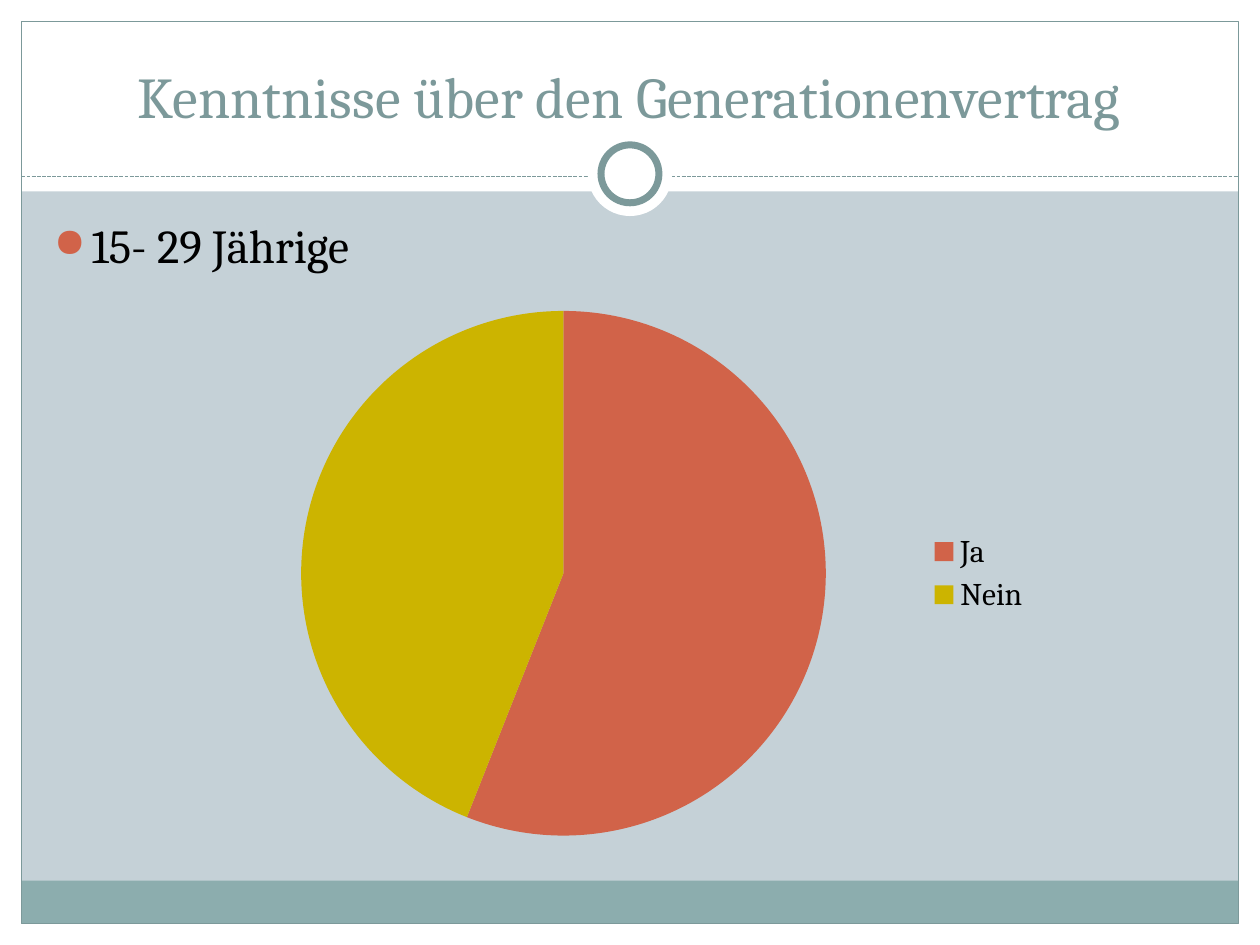
from lxml.etree import SubElement
from pptx import Presentation
from pptx.chart.data import CategoryChartData
from pptx.dml.color import RGBColor
from pptx.enum.chart import XL_CHART_TYPE, XL_LEGEND_POSITION
from pptx.enum.dml import MSO_LINE
from pptx.enum.shapes import MSO_CONNECTOR, MSO_SHAPE
from pptx.enum.text import MSO_ANCHOR, PP_ALIGN
from pptx.oxml.ns import qn
from pptx.util import Inches, Pt

WHITE = RGBColor(0xFF, 0xFF, 0xFF)
BLACK = RGBColor(0x00, 0x00, 0x00)
MIST = RGBColor(0xC5, 0xD1, 0xD7)
SAGE = RGBColor(0x8C, 0xAD, 0xAE)
SLATE = RGBColor(0x7C, 0x99, 0x9A)
RUST = RGBColor(0xD1, 0x63, 0x49)
MUSTARD = RGBColor(0xCC, 0xB4, 0x00)
FONT = "Cambria"
WIDTH, HEIGHT, MARGIN = 10, 7.5, 0.17


def inches(box):
    return [Inches(value) for value in box]


def set_font(font, size, color):
    for name, value in {"name": FONT, "size": Pt(size)}.items():
        setattr(font, name, value)
    font.color.rgb = color


def add_plain(page, kind, box, fill=None, line=None, weight=0.75):
    shape = page.shapes.add_shape(kind, *inches(box))
    shape.shadow.inherit = False
    if fill is None:
        shape.fill.background()
    else:
        shape.fill.solid()
        shape.fill.fore_color.rgb = fill
    if line is None:
        shape.line.fill.background()
    else:
        shape.line.color.rgb = line
        shape.line.width = Pt(weight)


def add_text(page, box, text, size, color, anchor):
    frame = page.shapes.add_textbox(*inches(box)).text_frame
    for name, value in {"word_wrap": True, "vertical_anchor": anchor}.items():
        setattr(frame, name, value)
    para = frame.paragraphs[0]
    span = para.add_run()
    span.text = text
    set_font(span.font, size, color)
    return para


def add_frame(page, box):
    left, top, width, height = box
    right, bottom = left + width, top + height
    inner = width - 2 * MARGIN

    # White margins and header band
    for band in (
        (left, bottom - MARGIN, width, MARGIN),
        (left, top, width, 1.52),
        (left, top, MARGIN, height),
        (right - MARGIN, top, MARGIN, height),
    ):
        add_plain(page, MSO_SHAPE.RECTANGLE, band, WHITE)

    # Footer band and outline
    add_plain(page, MSO_SHAPE.RECTANGLE,
              (left + MARGIN, bottom - MARGIN - 0.34, inner, 0.34), SAGE)
    add_plain(page, MSO_SHAPE.RECTANGLE,
              (left + MARGIN, top + MARGIN, inner, height - 2 * MARGIN), line=SLATE)

    # Dashed divider
    divider = page.shapes.add_connector(
        MSO_CONNECTOR.STRAIGHT,
        *inches((left + MARGIN, top + 1.4, right - MARGIN, top + 1.4)))
    divider.line.color.rgb = SLATE
    divider.line.width = Pt(0.75)
    divider.line.dash_style = MSO_LINE.SQUARE_DOT
    SubElement(divider.element.spPr, qn("a:effectLst"))

    # Ring on the divider
    for size, line in ((0.67, None), (0.46, SLATE)):
        corner = (left + (width - size) / 2, top + 1.38 - size / 2)
        add_plain(page, MSO_SHAPE.OVAL, (*corner, size, size), WHITE, line, 4)


def add_title(page, box):
    para = add_text(page, box, "Kenntnisse über den Generationenvertrag",
                    33, SLATE, MSO_ANCHOR.BOTTOM)
    para.alignment = PP_ALIGN.CENTER


def add_body(page, box):
    para = add_text(page, box, "15- 29 Jährige", 27, BLACK, MSO_ANCHOR.TOP)
    para.space_before = Pt(5.4)
    props = para._p.get_or_add_pPr()
    props.set("marL", str(Inches(0.3)))
    props.set("indent", str(Inches(-0.3)))
    bullet_color = SubElement(props, qn("a:buClr"))
    SubElement(bullet_color, qn("a:srgbClr"), val=str(RUST))
    SubElement(props, qn("a:buSzPct"), val="85000")
    SubElement(props, qn("a:buChar"), char="●")


def add_pie(page, box):
    data = CategoryChartData()
    data.categories = ["Ja", "Nein"]
    data.add_series("Series 1", (56, 44))
    chart = page.shapes.add_chart(XL_CHART_TYPE.PIE, *inches(box), data).chart
    chart.has_title = False
    set_font(chart.font, 18, BLACK)
    chart.has_legend = True
    chart.legend.position = XL_LEGEND_POSITION.RIGHT
    chart.legend.include_in_layout = False
    plot = chart.plots[0]
    plot.vary_by_categories = True
    for index, color in enumerate((RUST, MUSTARD)):
        fill = plot.series[0].points[index].format.fill
        fill.solid()
        fill.fore_color.rgb = color


def main():
    deck = Presentation()
    deck.slide_width, deck.slide_height = Inches(WIDTH), Inches(HEIGHT)
    page = deck.slides.add_slide(deck.slide_layouts[6])
    page.background.fill.solid()
    page.background.fill.fore_color.rgb = MIST
    add_frame(page, (0, 0, WIDTH, HEIGHT))
    add_title(page, (0.33, 0.25, 9.33, 0.83))
    add_body(page, (0.33, 1.67, 9.3, 5))
    add_pie(page, (1.61, 2.33, 6.67, 4.44))
    deck.save("out.pptx")


if __name__ == "__main__":
    main()
